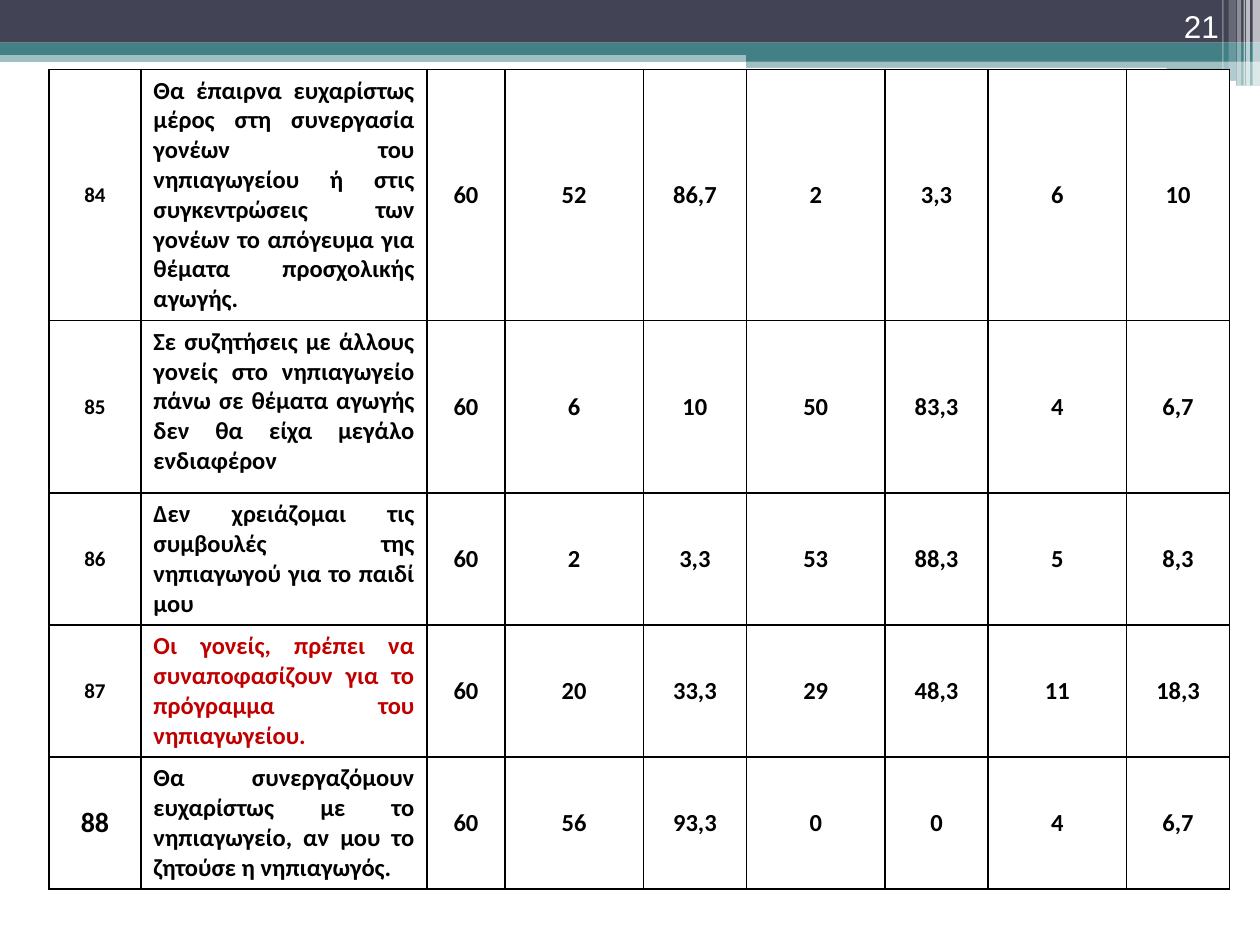
"""Build a slide with questionnaire items 84 to 88 and their answer counts."""
from dataclasses import dataclass

from lxml.etree import SubElement
from pptx import Presentation
from pptx.dml.color import RGBColor
from pptx.enum.shapes import MSO_SHAPE
from pptx.enum.text import MSO_ANCHOR, PP_ALIGN
from pptx.oxml.ns import qn
from pptx.slide import Slide
from pptx.table import _Cell
from pptx.util import Cm, Pt

COLORS = {
    "navy": "424456",
    "teal": "438086",
    "white": "FFFFFF",
    "black": "000000",
    "red": "C00000",
}
COLUMN_WIDTHS = [1.85, 5.77, 1.57] + [2.79, 2.08] * 3
BORDER_WIDTH = Pt(1)


@dataclass
class Band:
    left: float
    top: float
    width: float
    height: float
    color: str
    opacity: int = 100
    rounded: bool = False


@dataclass
class Item:
    number: str
    statement: str
    values: str
    height: float
    number_size: int = 12
    statement_color: str = "black"


BANDS = [
    Band(0, 1.02, 25.4, 0.23, "teal", 50),
    Band(0, 0, 25.4, 0.86, "navy"),
    Band(0, 0.86, 25.4, 0.25, "teal"),
    Band(15.04, 0.99, 10.36, 0.25, "teal"),
    Band(15.04, 1.22, 10.36, 0.51, "teal", 50),
    Band(15.01, 1.37, 8.51, 0.08, "white", rounded=True),
    Band(20.47, 1.63, 4.45, 0.1, "white", rounded=True),
    Band(25.25, 0, 0.15, 1.73, "white", 65),
    Band(25.12, 0, 0.08, 1.73, "white", 65),
    Band(25.07, 0, 0.03, 1.73, "white", 60),
    Band(24.94, 0, 0.08, 1.73, "white", 40),
    Band(24.77, 0, 0.15, 1.63, "white", 20),
    Band(24.64, 0, 0.03, 1.63, "white", 30),
]

ITEMS = [
    Item("84", "Θα έπαιρνα ευχαρίστως μέρος στη συνεργασία γονέων του νηπιαγωγείου "
         "ή στις συγκεντρώσεις των γονέων το απόγευμα για θέματα προσχολικής αγωγής.",
         "60 52 86,7 2 3,3 6 10", 5),
    Item("85", "Σε συζητήσεις με άλλους γονείς στο νηπιαγωγείο πάνω σε θέματα αγωγής "
         "δεν θα είχα μεγάλο ενδιαφέρον",
         "60 6 10 50 83,3 4 6,7", 3.48),
    Item("86", "Δεν χρειάζομαι τις συμβουλές της νηπιαγωγού για το παιδί μου",
         "60 2 3,3 53 88,3 5 8,3", 2.62),
    Item("87", "Οι γονείς, πρέπει να συναποφασίζουν για το πρόγραμμα του νηπιαγωγείου.",
         "60 20 33,3 29 48,3 11 18,3", 2.62, statement_color="red"),
    Item("88", "Θα συνεργαζόμουν ευχαρίστως με το νηπιαγωγείο, αν μου το ζητούσε "
         "η νηπιαγωγός.",
         "60 56 93,3 0 0 4 6,7", 2.62, number_size=16),
]


def rgb(name: str) -> RGBColor:
    return RGBColor.from_string(COLORS[name])


def draw_band(slide: Slide, band: Band) -> None:
    kind = MSO_SHAPE.ROUNDED_RECTANGLE if band.rounded else MSO_SHAPE.RECTANGLE
    shape = slide.shapes.add_shape(
        kind, Cm(band.left), Cm(band.top), Cm(band.width), Cm(band.height))
    shape.shadow.inherit = False
    shape.line.fill.background()
    shape.fill.solid()
    shape.fill.fore_color.rgb = rgb(band.color)
    if band.opacity < 100:
        color = shape.fill._xPr.find(qn("a:solidFill"))[0]
        SubElement(color, qn("a:alpha"), val=str(band.opacity * 1000))


def add_borders(cell: _Cell) -> None:
    properties = cell._tc.get_or_add_tcPr()
    for side in ("lnL", "lnR", "lnT", "lnB"):
        line = SubElement(properties, qn(f"a:{side}"), w=str(int(BORDER_WIDTH)))
        fill = SubElement(line, qn("a:solidFill"))
        SubElement(fill, qn("a:srgbClr"), val=COLORS["black"])


def fill_cell(cell: _Cell, text: str, size: int = 14, color: str = "black",
              alignment: PP_ALIGN = PP_ALIGN.CENTER,
              anchor: MSO_ANCHOR = MSO_ANCHOR.MIDDLE) -> None:
    add_borders(cell)
    cell.fill.solid()
    cell.fill.fore_color.rgb = rgb("white")
    cell.vertical_anchor = anchor
    cell.text = text
    paragraph = cell.text_frame.paragraphs[0]
    paragraph.alignment = alignment
    paragraph.font.name = "Calibri"
    paragraph.font.size = Pt(size)
    paragraph.font.bold = True
    paragraph.font.color.rgb = rgb(color)


def draw_table(slide: Slide, items: list[Item]) -> None:
    table = slide.shapes.add_table(
        len(items), len(COLUMN_WIDTHS), Cm(0.99), Cm(1.4),
        Cm(sum(COLUMN_WIDTHS)), Cm(sum(item.height for item in items))).table
    table.first_row = False
    table.horz_banding = False
    for column, width in zip(table.columns, COLUMN_WIDTHS):
        column.width = Cm(width)
    for row, item in zip(table.rows, items):
        row.height = Cm(item.height)
        number_cell, statement_cell, *value_cells = row.cells
        fill_cell(number_cell, item.number, item.number_size)
        fill_cell(statement_cell, item.statement, color=item.statement_color,
                  alignment=PP_ALIGN.JUSTIFY, anchor=MSO_ANCHOR.TOP)
        for cell, value in zip(value_cells, item.values.split()):
            fill_cell(cell, value)


def draw_slide_number(slide: Slide, number: str) -> None:
    text_frame = slide.shapes.add_textbox(Cm(22.71), Cm(0), Cm(2.11), Cm(1.02)).text_frame
    text_frame.word_wrap = True
    text_frame.vertical_anchor = MSO_ANCHOR.BOTTOM
    paragraph = text_frame.paragraphs[0]
    paragraph.text = number
    paragraph.alignment = PP_ALIGN.RIGHT
    paragraph.font.name = "Arial"
    paragraph.font.size = Pt(18)
    paragraph.font.color.rgb = rgb("white")


def main() -> None:
    presentation = Presentation()
    presentation.slide_width = Cm(25.4)
    presentation.slide_height = Cm(19.05)
    slide = presentation.slides.add_slide(presentation.slide_layouts[6])
    for band in BANDS:
        draw_band(slide, band)
    draw_table(slide, ITEMS)
    draw_slide_number(slide, "21")
    presentation.save("out.pptx")


if __name__ == "__main__":
    main()
